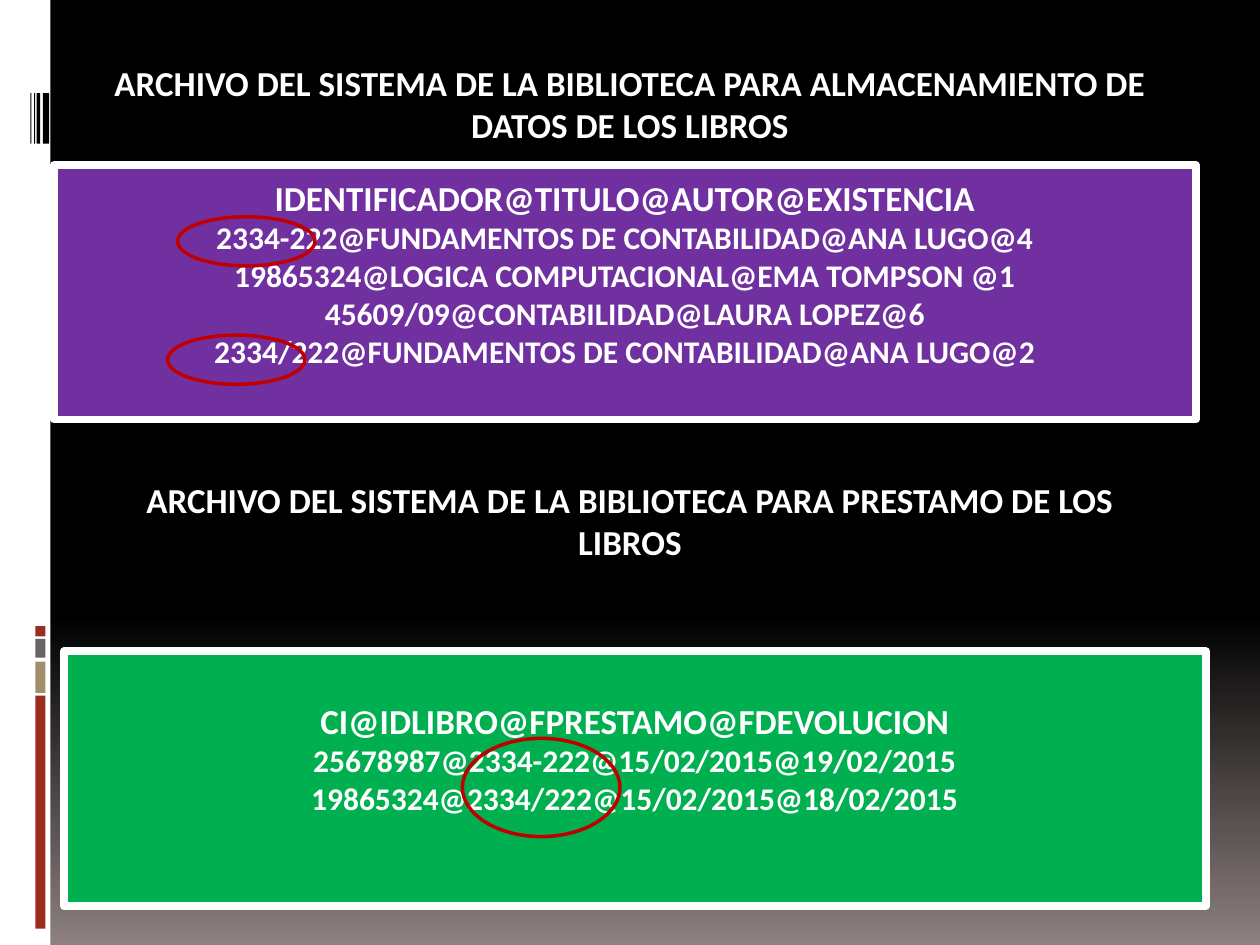
from copy import deepcopy

from pptx import Presentation
from pptx.dml.color import RGBColor
from pptx.enum.shapes import MSO_SHAPE
from pptx.enum.text import MSO_ANCHOR, PP_ALIGN
from pptx.util import Inches, Pt

BLACK = RGBColor(0x00, 0x00, 0x00)
WHITE = RGBColor(0xFF, 0xFF, 0xFF)
WARM_GRAY = RGBColor(0x8C, 0x80, 0x80)
DARK_GRAY = RGBColor(0x69, 0x64, 0x64)
BRICK = RGBColor(0x9B, 0x2D, 0x1F)
TAN = RGBColor(0xA2, 0x8E, 0x6A)
PURPLE = RGBColor(0x70, 0x30, 0xA0)
GREEN = RGBColor(0x00, 0xB0, 0x50)
RED = RGBColor(0xC0, 0x00, 0x00)

prs = Presentation()
prs.slide_width, prs.slide_height = Inches(10), Inches(7.5)
s = prs.slides.add_slide(prs.slide_layouts[6])


def add_shape(kind, x, y, w, h, fill=None, line=None, line_width=1):
    sp = s.shapes.add_shape(kind, Inches(x), Inches(y), Inches(w), Inches(h))
    sp.shadow.inherit = False
    if fill is None:
        sp.fill.background()
    else:
        sp.fill.solid()
        sp.fill.fore_color.rgb = fill
    if line is None:
        sp.line.fill.background()
    else:
        sp.line.color.rgb = line
        sp.line.width = Pt(line_width)
    return sp


def write_lines(tf, lines, first_size=20, size=18, color=WHITE, top=0.05):
    tf.word_wrap = True
    tf.vertical_anchor = MSO_ANCHOR.TOP
    tf.margin_top = Inches(top)
    for i, text in enumerate(lines):
        p = tf.paragraphs[0] if i == 0 else tf.add_paragraph()
        p.alignment = PP_ALIGN.CENTER
        r = p.add_run()
        r.text = text
        r.font.name = "Calibri"
        r.font.size = Pt(size if i else first_size)
        r.font.bold = True
        r.font.color.rgb = color


# Background: black down to 65 %, then fading to warm gray
fill = s.background.fill
fill.gradient()
fill.gradient_angle = 270
start, end = fill.gradient_stops
start.color.rgb, start.position = BLACK, 0
end.color.rgb, end.position = WARM_GRAY, 1
stops = s._element.xpath(".//p:bg//a:gsLst")[0]
middle = deepcopy(stops[0])
middle.set("pos", "65000")
stops.insert(1, middle)

# White side strip with coloured blocks and black bars
add_shape(MSO_SHAPE.RECTANGLE, 0, 0, 0.4, 7.5, WHITE)
for y, h, color in [(5.52, 1.85, BRICK), (5.25, 0.25, TAN),
                    (5.07, 0.15, DARK_GRAY), (4.97, 0.08, BRICK)]:
    add_shape(MSO_SHAPE.RECTANGLE, 0.28, y, 0.08, h, color)
for x, w in [(0.34, 0.05), (0.29, 0.03), (0.27, 0.01), (0.24, 0.01)]:
    add_shape(MSO_SHAPE.RECTANGLE, x, 0.74, w, 0.4, BLACK)

# File panels: header line followed by records
panels = [
    (0.43, 1.31, PURPLE, 0.09, [
        "IDENTIFICADOR@TITULO@AUTOR@EXISTENCIA",
        "2334-222@FUNDAMENTOS DE CONTABILIDAD@ANA LUGO@4",
        "19865324@LOGICA COMPUTACIONAL@EMA TOMPSON @1",
        "45609/09@CONTABILIDAD@LAURA LOPEZ@6",
        "2334/222@FUNDAMENTOS DE CONTABILIDAD@ANA LUGO@2",
    ]),
    (0.51, 5.17, GREEN, 0.38, [
        "CI@IDLIBRO@FPRESTAMO@FDEVOLUCION",
        "25678987@2334-222@15/02/2015@19/02/2015",
        "19865324@2334/222@15/02/2015@18/02/2015",
    ]),
]
for x, y, color, top, lines in panels:
    sp = add_shape(MSO_SHAPE.RECTANGLE, x, y, 9.06, 2.02, color, WHITE, 4.5)
    write_lines(sp.text_frame, lines, top=top)

# Headings
headings = [
    (0.75, 0.44, 8.5, "ARCHIVO DEL SISTEMA DE LA BIBLIOTECA PARA "
                      "ALMACENAMIENTO DE DATOS DE LOS LIBROS"),
    (0.65, 3.75, 8.7, "ARCHIVO DEL SISTEMA DE LA BIBLIOTECA PARA "
                      "PRESTAMO DE LOS LIBROS"),
]
for x, y, w, text in headings:
    box = s.shapes.add_textbox(Inches(x), Inches(y), Inches(w), Inches(0.77))
    write_lines(box.text_frame, [text])

# Ellipses around the conflicting identifiers
for x, y, w, h in [(1.41, 1.72, 1.09, 0.39), (1.33, 2.66, 1.09, 0.39),
                   (3.67, 5.86, 1.25, 0.78)]:
    add_shape(MSO_SHAPE.OVAL, x, y, w, h, line=RED, line_width=2)

prs.save("out.pptx")
